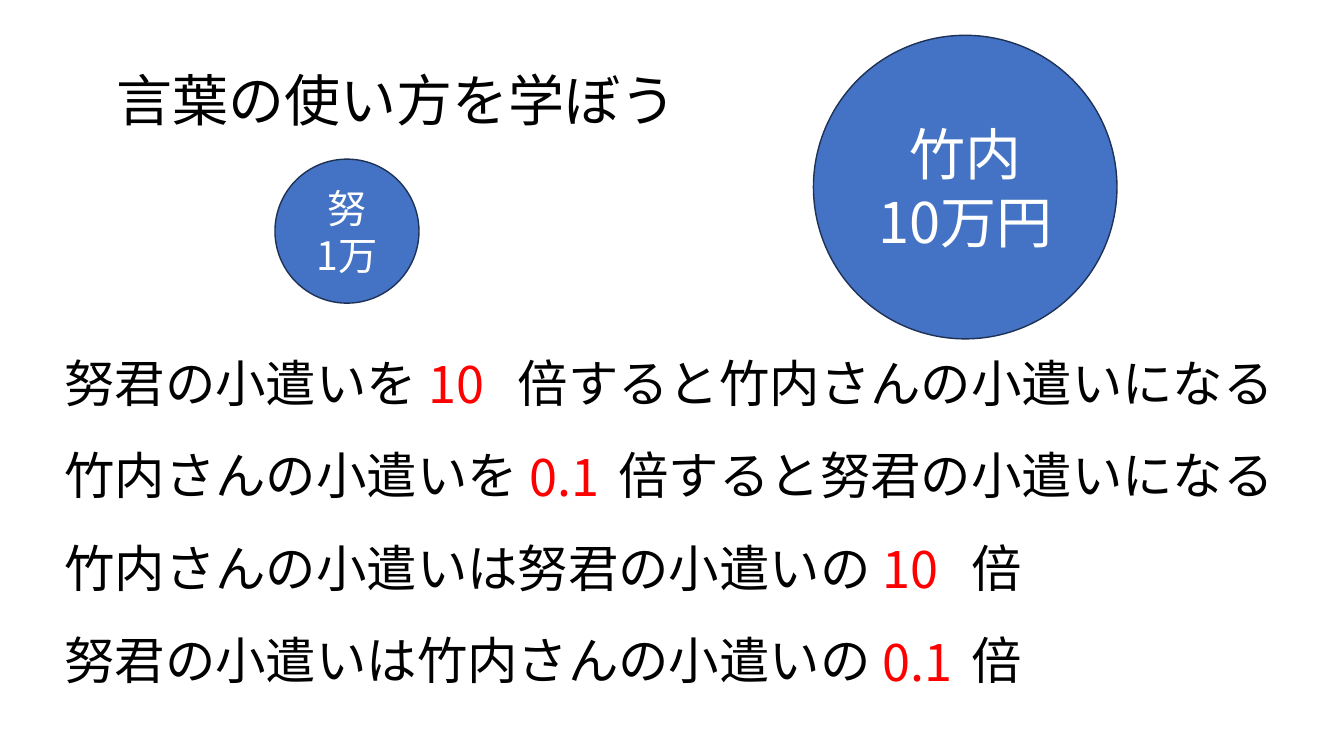
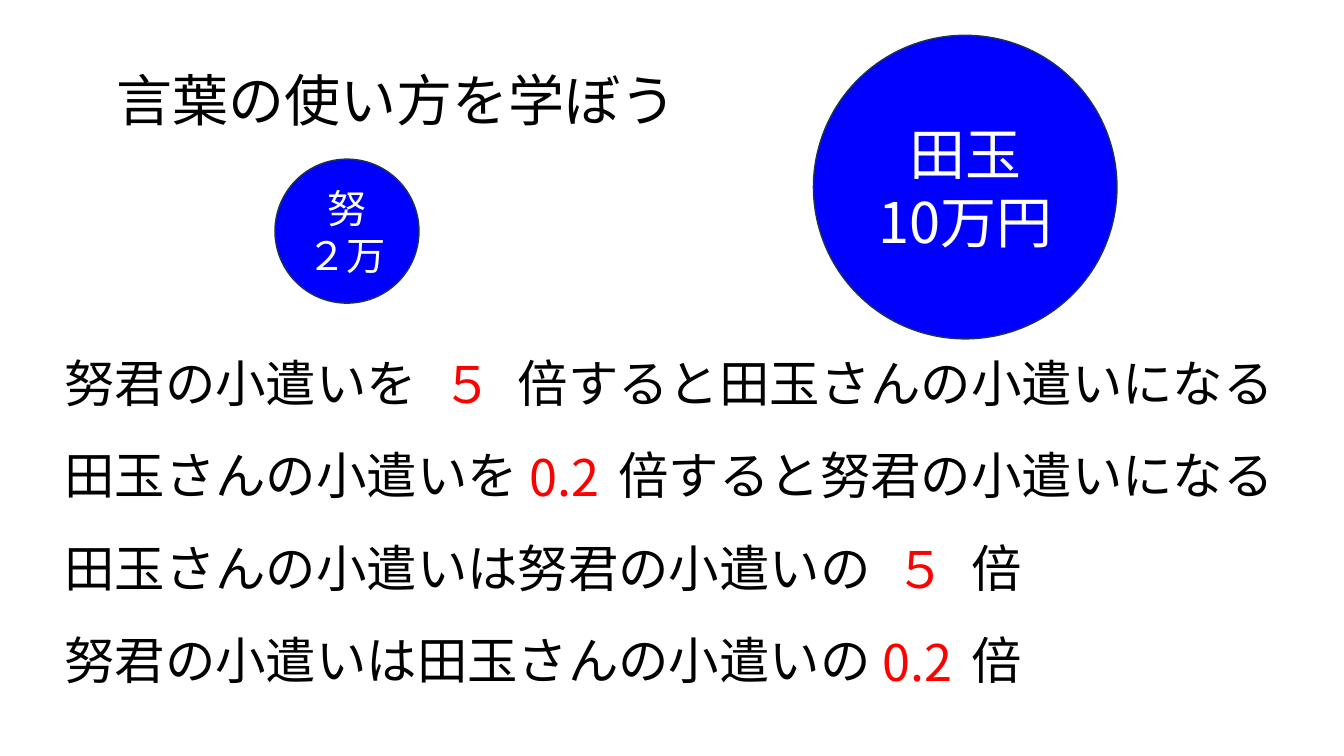
import pptx
import pptx.util
import pptx.dml.color
import pptx.enum.shapes
import pptx.enum.text
import lxml.etree
from dataclasses import dataclass
from pptx.oxml.ns import qn

Cm = pptx.util.Cm


@dataclass(frozen=True)
class Theme:
    font: str = "Noto Sans CJK JP"
    ink: str = "000000"
    answer: str = "FF0000"
    on_circle: str = "FFFFFF"
    outline: str = "1E3256"
    title_size: int = 40
    small_size: int = 28
    body_size: int = 36


theme = Theme()


def add_span(para, text, size, colour):
    span = para.add_run()
    span.text = text
    span.font.size = pptx.util.Pt(size)
    span.font.name = theme.font
    span.font.color.rgb = pptx.dml.color.RGBColor.from_string(colour)
    # Japanese characters take the East Asian typeface
    east_asian = lxml.etree.SubElement(span._r.get_or_add_rPr(), qn("a:ea"))
    east_asian.set("typeface", theme.font)


def add_text(page, left, top, width, height, text, size, colour):
    box = page.shapes.add_textbox(Cm(left), Cm(top), Cm(width), Cm(height))
    box.text_frame.word_wrap = True
    box.text_frame.auto_size = pptx.enum.text.MSO_AUTO_SIZE.SHAPE_TO_FIT_TEXT
    para = box.text_frame.paragraphs[0]
    add_span(para, text, size, colour)
    return para


# Layout in centimetres; one full-width character is as wide as the body size
row_left, row_top, row_pitch, row_height = 1.37, 8.74, 2.33, 1.8
inset = 0.25
character = 1.27
blank_characters = 2

# Friend, amount in the small circle, circle fill, ratio, inverse ratio
lessons = [
    ("竹内", "1万", "4472C4", "10", "0.1"),
    ("田玉", "２万", "0000FF", "５", "0.2"),
]

# Answer box: shift from the start of the blank, width
answer_boxes = {"10": (0.05, 2.62), "５": (0.38, 1.8),
                "0.1": (0.05, 2.87), "0.2": (0.05, 2.87)}

deck = pptx.Presentation()
deck.slide_width, deck.slide_height = Cm(33.87), Cm(19.05)

for friend, amount, fill, ratio, inverse in lessons:
    page = deck.slides.add_slide(deck.slide_layouts[6])

    # Circles with the pocket money of each person
    circles = [
        (6.93, 4.01, 3.63, theme.small_size, ("努", amount)),
        (20.5, 0.89, 7.65, theme.title_size, (friend, "10万円")),
    ]
    for left, top, diameter, size, lines in circles:
        circle = page.shapes.add_shape(
            pptx.enum.shapes.MSO_SHAPE.OVAL,
            Cm(left), Cm(top), Cm(diameter), Cm(diameter))
        circle.shadow.inherit = False
        circle.fill.solid()
        circle.fill.fore_color.rgb = pptx.dml.color.RGBColor.from_string(fill)
        circle.line.color.rgb = pptx.dml.color.RGBColor.from_string(theme.outline)
        circle.line.width = pptx.util.Pt(1)
        frame = circle.text_frame
        frame.vertical_anchor = pptx.enum.text.MSO_ANCHOR.MIDDLE
        for index, line in enumerate(lines):
            para = frame.add_paragraph() if index else frame.paragraphs[0]
            para.alignment = pptx.enum.text.PP_ALIGN.CENTER
            add_span(para, line, size, theme.on_circle)

    # Title
    add_text(page, 2.69, 1.52, 15.09, 1.95, "言葉の使い方を学ぼう",
             theme.title_size, theme.ink)

    # Sentences with a blank, each with its answer laid over the blank
    sentences = [
        ("努君の小遣いを", f"倍すると{friend}さんの小遣いになる", ratio, 31.12),
        (f"{friend}さんの小遣いを", "倍すると努君の小遣いになる", inverse, 31.12),
        (f"{friend}さんの小遣いは努君の小遣いの", "倍", ratio, 24.94),
        (f"努君の小遣いは{friend}さんの小遣いの", "倍", inverse, 24.94),
    ]
    for row, (lead, rest, answer, width) in enumerate(sentences):
        top = row_top + row * row_pitch
        para = add_text(page, row_left, top, width, row_height,
                        f"{lead}\t{rest}", theme.body_size, theme.ink)

        # A tab stop opens the blank
        blank_start = len(lead) * character
        tabs = lxml.etree.SubElement(para._p.get_or_add_pPr(), qn("a:tabLst"))
        tab = lxml.etree.SubElement(tabs, qn("a:tab"))
        tab.set("pos", str(Cm(blank_start + blank_characters * character)))
        tab.set("algn", "l")

        shift, answer_width = answer_boxes[answer]
        add_text(page, row_left + inset + blank_start + shift, top + 0.04,
                 answer_width, row_height, answer, theme.body_size, theme.answer)

deck.save("out.pptx")
